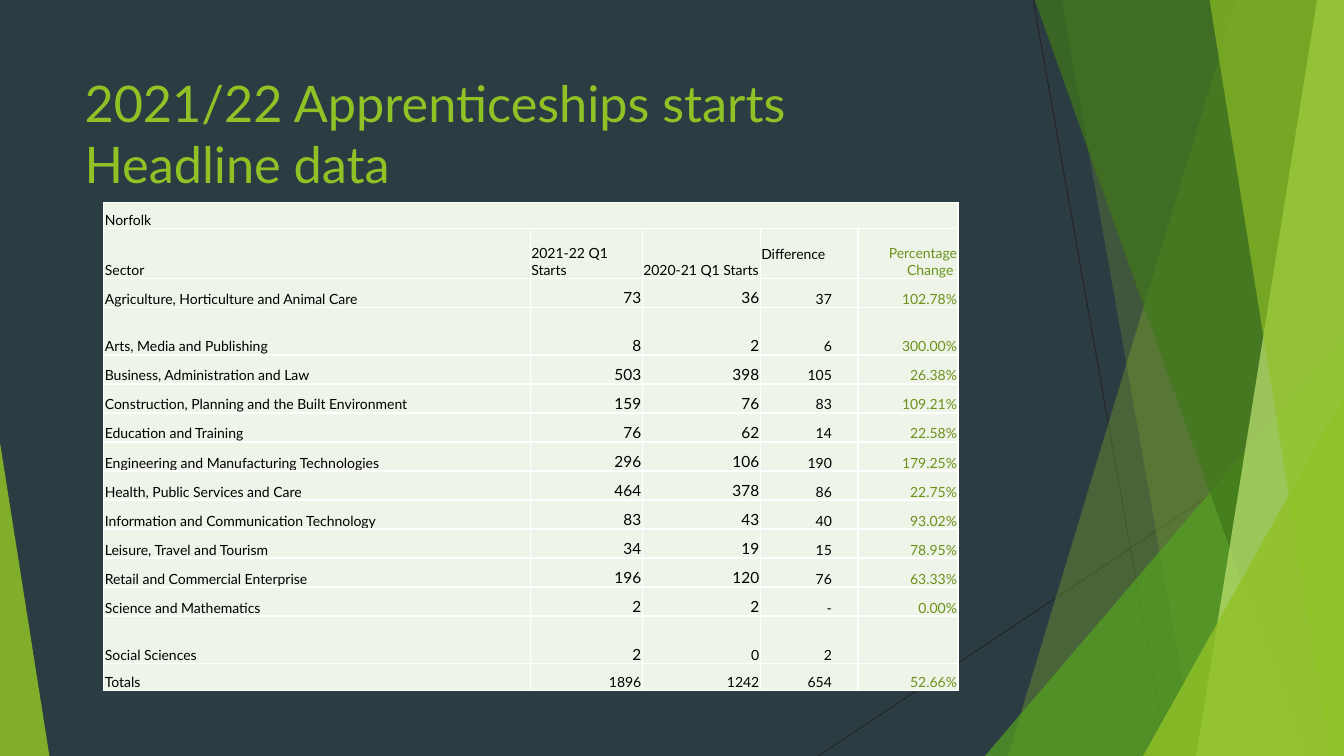
from lxml.etree import SubElement
from pptx import Presentation
from pptx.dml.color import RGBColor
from pptx.enum.shapes import MSO_CONNECTOR as LINK, MSO_SHAPE as SHAPE
from pptx.enum.text import MSO_ANCHOR as ANCHOR, PP_ALIGN as ALIGN
from pptx.oxml.ns import qn
from pptx.util import Inches, Pt

WIDE, HIGH = Inches(13.333), Inches(7.5)
FONT = "Lato"
NIGHT = RGBColor(0x2C, 0x3C, 0x43)
LIME = RGBColor(0x90, 0xC2, 0x26)
LEAF = RGBColor(0x54, 0xA0, 0x21)
PINE = RGBColor(0x3F, 0x78, 0x19)
PALE = RGBColor(0xC0, 0xE4, 0x74)
OLIVE = RGBColor(0x6C, 0x92, 0x1D)
MIST = RGBColor(0xEE, 0xF4, 0xE8)
COAL = RGBColor(0x26, 0x26, 0x26)
BLACK = RGBColor(0, 0, 0)

# Shares of the slide, in percent
COLS = [31.73, 8.33, 8.78, 7.28, 7.43]
EDGE, HEAD, BODY, TALL = 3.47, 6.53, 3.84, 6.33

HEADS = ["Sector", "2021-22 Q1 Starts", "2020-21 Q1 Starts", "Difference",
         "Percentage Change "]
DATA = [
    ("Agriculture, Horticulture and Animal Care", "73", "36", "37", "102.78%"),
    ("Arts, Media and Publishing", "8", "2", "6", "300.00%"),
    ("Business, Administration and Law", "503", "398", "105", "26.38%"),
    ("Construction, Planning and the Built Environment", "159", "76", "83",
     "109.21%"),
    ("Education and Training", "76", "62", "14", "22.58%"),
    ("Engineering and Manufacturing Technologies", "296", "106", "190",
     "179.25%"),
    ("Health, Public Services and Care", "464", "378", "86", "22.75%"),
    ("Information and Communication Technology", "83", "43", "40", "93.02%"),
    ("Leisure, Travel and Tourism", "34", "19", "15", "78.95%"),
    ("Retail and Commercial Enterprise", "196", "120", "76", "63.33%"),
    ("Science and Mathematics", "2", "2", "-", "0.00%"),
    ("Social Sciences", "2", "0", "2", ""),
    ("Totals", "1896", "1242", "654", "52.66%"),
]


def across(share):
    return round(WIDE * share / 100)


def down(share):
    return round(HIGH * share / 100)


def tint(shape, color, alpha):
    """Fill without outline or shadow; alpha is the opacity in percent."""
    shape.shadow.inherit = False
    shape.line.fill.background()
    shape.fill.solid()
    shape.fill.fore_color.rgb = color
    tone = shape.fill._xPr.find(qn("a:solidFill"))[0]
    SubElement(tone, qn("a:alpha"), val=str(alpha * 1000))


def ray(group, x1, y1, x2, y2):
    line = group.shapes.add_connector(
        LINK.STRAIGHT, across(x1), down(y1), across(x2), down(y2))
    line.line.color.rgb = COAL
    line.line.width = Pt(0.75)
    SubElement(line._element.spPr, qn("a:effectLst"))


def pane(group, top, foot, color, alpha):
    """Four-sided sheet from a slanted left edge to the slide's right side."""
    form = group.shapes.build_freeform(
        top, -0.1, scale=(WIDE / 100, HIGH / 100))
    form.add_line_segments([(100, -0.1), (100, 100), (foot, 100)], close=True)
    tint(form.convert_to_shape(), color, alpha)


def wedge(group, left, top, right, peak, color, alpha):
    """Right-angled triangle on the slide's foot; peak 0 is left, 1 right."""
    shape = group.shapes.add_shape(
        SHAPE.ISOSCELES_TRIANGLE, across(left), down(top),
        across(right - left), down(100 - top))
    shape.adjustments[0] = peak
    tint(shape, color, alpha)


def decor(slide):
    group = slide.shapes.add_group_shape()
    ray(group, 76.88, 0, 86.85, 100)
    ray(group, 100, 53.73, 60.9, 100)
    pane(group, 92.1, 75.3, LIME, 30)
    pane(group, 78.75, 88.73, LIME, 20)
    wedge(group, 73.28, 44.4, 100, 1, LEAF, 72)
    pane(group, 76.58, 96.83, PINE, 70)
    pane(group, 97.73, 89.4, PALE, 70)
    pane(group, 89.7, 98.85, LIME, 65)
    wedge(group, 85.05, 52.4, 100, 1, LIME, 80)
    wedge(group, 0, 58.53, 3.68, 0, LIME, 85)


def write(par, text, size, color):
    run = par.add_run()
    run.text = text
    run.font.name = FONT
    run.font.size = Pt(size)
    run.font.color.rgb = color


def title(slide, *lines):
    box = slide.shapes.add_textbox(
        across(5.55), down(8.93), across(70.5), down(19.2))
    box.text_frame.word_wrap = True
    par = box.text_frame.paragraphs[0]
    for i, line in enumerate(lines):
        if i:
            par.add_line_break()
        write(par, line, 36, LIME)


def border(cell):
    props = cell._tc.get_or_add_tcPr()
    for i, side in enumerate(("lnL", "lnR", "lnT", "lnB")):
        edge = props.makeelement(qn("a:" + side), {"w": str(Pt(1))})
        fill = SubElement(edge, qn("a:solidFill"))
        SubElement(fill, qn("a:srgbClr"), val="FFFFFF")
        props.insert(i, edge)


def style(cell):
    cell.fill.solid()
    cell.fill.fore_color.rgb = MIST
    cell.vertical_anchor = ANCHOR.BOTTOM
    cell.margin_left = cell.margin_right = cell.margin_top = Inches(0.01)
    cell.margin_bottom = 0
    border(cell)


def enter(cell, text, size=10, color=BLACK, align=ALIGN.LEFT):
    par = cell.text_frame.paragraphs[0]
    par.alignment = align
    if text:
        write(par, text, size, color)


def record(table, r, row):
    for c, text in enumerate(row):
        cell = table.cell(r, c)
        big = c in (1, 2) and row[0] != "Totals" and text != "0"
        enter(cell, text, 11 if big else 10, OLIVE if c == 4 else BLACK,
              ALIGN.RIGHT if c else ALIGN.LEFT)
        if c == 3:
            cell.margin_right = Inches(0.26)


def grid(slide):
    rows = [EDGE, HEAD] + [BODY] * 11 + [TALL, EDGE]
    rows[3] = TALL
    table = slide.shapes.add_table(
        len(rows), len(COLS), across(7.73), down(26.8),
        across(sum(COLS)), down(sum(rows))).table
    table.first_row = table.horz_banding = False
    for col, share in zip(table.columns, COLS):
        col.width = across(share)
    for row, share in zip(table.rows, rows):
        row.height = down(share)
    for cell in table.iter_cells():
        style(cell)
    table.cell(0, 0).merge(table.cell(0, len(COLS) - 1))
    enter(table.cell(0, 0), "Norfolk")
    for c, text in enumerate(HEADS):
        last = c == 4
        enter(table.cell(1, c), text, color=OLIVE if last else BLACK,
              align=ALIGN.RIGHT if last else ALIGN.LEFT)
    table.cell(1, 3).vertical_anchor = ANCHOR.MIDDLE
    for r, row in enumerate(DATA, 2):
        record(table, r, row)


def main():
    deck = Presentation()
    deck.slide_width, deck.slide_height = WIDE, HIGH
    slide = deck.slides.add_slide(deck.slide_layouts[6])
    slide.background.fill.solid()
    slide.background.fill.fore_color.rgb = NIGHT
    decor(slide)
    title(slide, "2021/22 Apprenticeships starts", "Headline data")
    grid(slide)
    deck.save("out.pptx")


if __name__ == "__main__":
    main()
